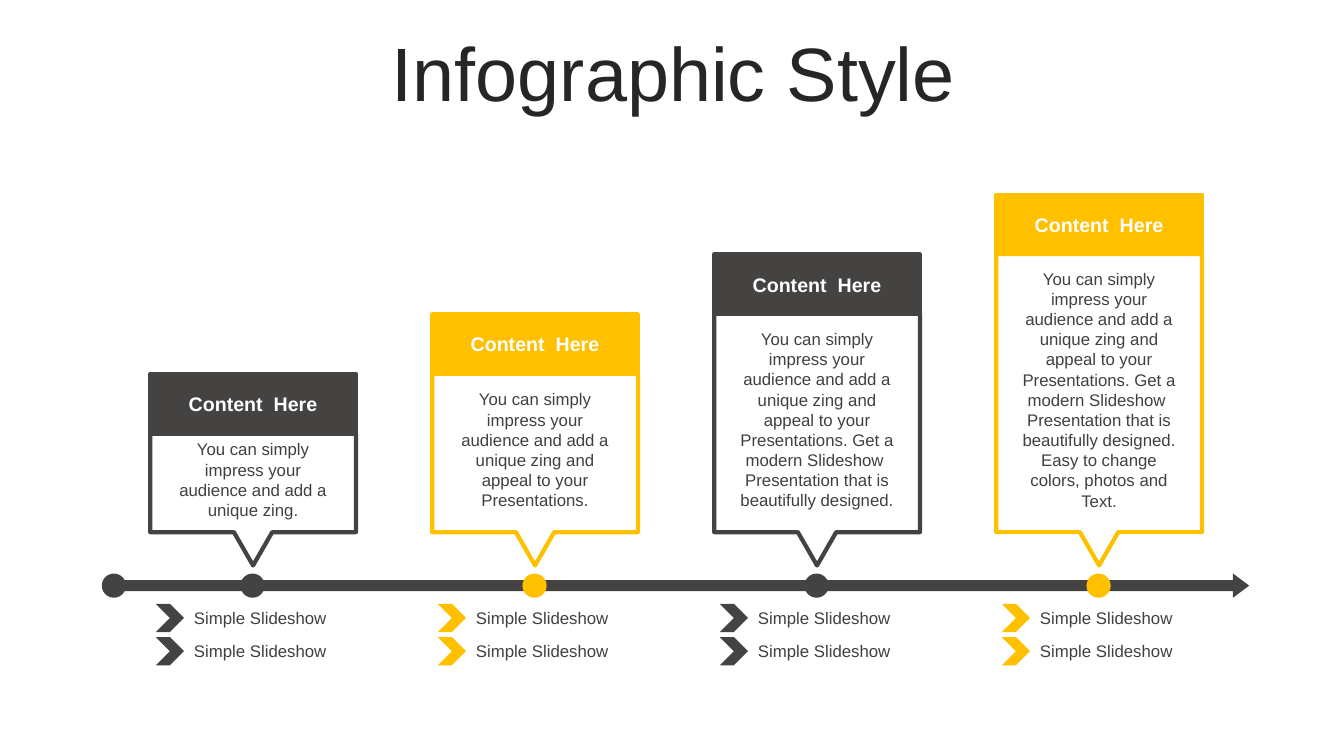
from dataclasses import dataclass

from pptx import Presentation
from pptx.dml.color import RGBColor
from pptx.enum.shapes import MSO_SHAPE
from pptx.enum.text import MSO_ANCHOR, MSO_AUTO_SIZE, PP_ALIGN
from pptx.shapes.autoshape import Shape
from pptx.shapes.shapetree import GroupShapes, SlideShapes
from pptx.slide import Slide
from pptx.text.text import TextFrame
from pptx.util import Inches, Length, Pt

SLIDE_WIDTH = Inches(13.33)
SLIDE_HEIGHT = Inches(7.5)
GRID_ROWS = 75
CELL = SLIDE_HEIGHT // GRID_ROWS

DARK = RGBColor(0x44, 0x43, 0x42)
YELLOW = RGBColor(0xFF, 0xC0, 0x00)
WHITE = RGBColor(0xFF, 0xFF, 0xFF)
TITLE_COLOR = RGBColor(0x26, 0x26, 0x26)
TEXT_COLOR = RGBColor(0x40, 0x40, 0x40)
FONT = "Arial"

FIRST_CARD_LEFT = 14.9
CARD_PITCH = 27.97
CARD_WIDTH = 20.4
CARD_BOTTOM = 52.8
FIRST_HEADER_TOP = 37.1
HEADER_RISE = 5.93
HEADER_HEIGHT = 5.9
POINTER_TIP = 56.1
POINTER_HALF_WIDTH = 1.9
BODY_WIDTH = 17.4
LINE_HEIGHT = 2.01
BODY_PADDING = 1.1
BODY_LIFT = 0.25

TIMELINE_TOP = 56.9
DOT_SIZE = 2.4
FIRST_BULLET_TOP = 59.9
BULLET_PITCH = 3.3
BULLET_SIZE = 2.8
BULLETS = ("Simple Slideshow", "Simple Slideshow")


@dataclass(frozen=True)
class Box:
    column: float
    row: float
    columns: float
    rows: float

    def lengths(self) -> tuple[Length, Length, Length, Length]:
        return cells(self.column), cells(self.row), cells(self.columns), cells(self.rows)


@dataclass(frozen=True)
class Card:
    color: RGBColor
    body: str
    lines: int


CARDS = (
    Card(DARK, "You can simply impress your audience and add a unique zing.", 4),
    Card(
        YELLOW,
        "You can simply impress your audience and add a unique zing and "
        "appeal to your Presentations.",
        6,
    ),
    Card(
        DARK,
        "You can simply impress your audience and add a unique zing and "
        "appeal to your Presentations. Get a modern Slideshow  Presentation "
        "that is beautifully designed.",
        9,
    ),
    Card(
        YELLOW,
        "You can simply impress your audience and add a unique zing and "
        "appeal to your Presentations. Get a modern Slideshow  Presentation "
        "that is beautifully designed. Easy to change colors, photos and Text.",
        12,
    ),
)


def cells(count: float) -> Length:
    return Length(round(count * CELL))


def card_left(index: int) -> float:
    return FIRST_CARD_LEFT + index * CARD_PITCH


def write(frame: TextFrame, text: str, size: float, color: RGBColor,
          alignment: PP_ALIGN, bold: bool = False) -> None:
    frame.word_wrap = True
    frame.text = text
    paragraph = frame.paragraphs[0]
    paragraph.alignment = alignment
    paragraph.font.name = FONT
    paragraph.font.size = Pt(size)
    paragraph.font.bold = bold
    paragraph.font.color.rgb = color


def add_solid(shapes: SlideShapes | GroupShapes, kind: MSO_SHAPE, box: Box,
              color: RGBColor) -> Shape:
    shape = shapes.add_shape(kind, *box.lengths())
    shape.shadow.inherit = False
    shape.fill.solid()
    shape.fill.fore_color.rgb = color
    shape.line.fill.background()
    return shape


def add_text(shapes: SlideShapes | GroupShapes, box: Box, text: str,
             alignment: PP_ALIGN) -> None:
    frame = shapes.add_textbox(*box.lengths()).text_frame
    write(frame, text, 12, TEXT_COLOR, alignment)
    frame.auto_size = MSO_AUTO_SIZE.SHAPE_TO_FIT_TEXT


def outline(shape: Shape, color: RGBColor) -> None:
    shape.line.color.rgb = color
    shape.line.width = Pt(3)


def add_title(slide: Slide) -> None:
    title = slide.shapes.title
    title.left, title.top, title.width, title.height = Box(3.5, 3.7, 126.6, 7.9).lengths()
    write(title.text_frame, "Infographic Style", 54, TITLE_COLOR, PP_ALIGN.CENTER)
    title.text_frame.vertical_anchor = MSO_ANCHOR.MIDDLE
    title.text_frame.auto_size = MSO_AUTO_SIZE.NONE
    title.text_frame.paragraphs[0].line_spacing = 0.9


def add_card(slide: Slide, index: int, card: Card) -> None:
    left = card_left(index)
    right = left + CARD_WIDTH
    center = left + CARD_WIDTH / 2
    header_top = FIRST_HEADER_TOP - index * HEADER_RISE
    body_top = header_top + HEADER_HEIGHT

    points = [
        (right, body_top),
        (right, CARD_BOTTOM),
        (center + POINTER_HALF_WIDTH, CARD_BOTTOM),
        (center, POINTER_TIP),
        (center - POINTER_HALF_WIDTH, CARD_BOTTOM),
        (left, CARD_BOTTOM),
    ]
    builder = slide.shapes.build_freeform(cells(left), cells(body_top))
    builder.add_line_segments([(cells(x), cells(y)) for x, y in points], close=True)
    callout = builder.convert_to_shape()
    callout.shadow.inherit = False
    callout.fill.background()
    outline(callout, card.color)

    header_box = Box(left, header_top, CARD_WIDTH, HEADER_HEIGHT)
    header = add_solid(slide.shapes, MSO_SHAPE.RECTANGLE, header_box, card.color)
    outline(header, card.color)
    write(header.text_frame, "Content  Here", 14, WHITE, PP_ALIGN.CENTER, bold=True)
    header.text_frame.vertical_anchor = MSO_ANCHOR.MIDDLE

    height = card.lines * LINE_HEIGHT + BODY_PADDING
    text_top = (body_top + CARD_BOTTOM - height) / 2 - BODY_LIFT
    text_box = Box(center - BODY_WIDTH / 2, text_top, BODY_WIDTH, height)
    add_text(slide.shapes, text_box, card.body, PP_ALIGN.CENTER)


def add_timeline(slide: Slide) -> None:
    shapes = slide.shapes.add_group_shape().shapes
    arrow_box = Box(12.1, TIMELINE_TOP, 111.8, DOT_SIZE)
    arrow = add_solid(shapes, MSO_SHAPE.RIGHT_ARROW, arrow_box, DARK)
    arrow.adjustments[0] = 0.45
    arrow.adjustments[1] = 0.67
    dots = [(10.1, DARK)]
    dots += [(card_left(index) + 8.95, card.color) for index, card in enumerate(CARDS)]
    for left, color in dots:
        add_solid(shapes, MSO_SHAPE.OVAL, Box(left, TIMELINE_TOP, DOT_SIZE, DOT_SIZE), color)


def add_bullets(slide: Slide, index: int, color: RGBColor) -> None:
    shapes = slide.shapes.add_group_shape().shapes
    left = card_left(index) + 0.55
    for row, text in enumerate(BULLETS):
        top = FIRST_BULLET_TOP + row * BULLET_PITCH
        chevron_box = Box(left, top, BULLET_SIZE, BULLET_SIZE)
        add_solid(shapes, MSO_SHAPE.CHEVRON, chevron_box, color)
        add_text(shapes, Box(left + BULLET_SIZE, top - 0.15, 16.5, 3), text, PP_ALIGN.LEFT)


def main() -> None:
    presentation = Presentation()
    presentation.slide_width = SLIDE_WIDTH
    presentation.slide_height = SLIDE_HEIGHT
    slide = presentation.slides.add_slide(presentation.slide_layouts.get_by_name("Title Only"))
    add_title(slide)
    for index, card in enumerate(CARDS):
        add_card(slide, index, card)
    add_timeline(slide)
    for index, card in enumerate(CARDS):
        add_bullets(slide, index, card.color)
    presentation.save("out.pptx")


if __name__ == "__main__":
    main()
